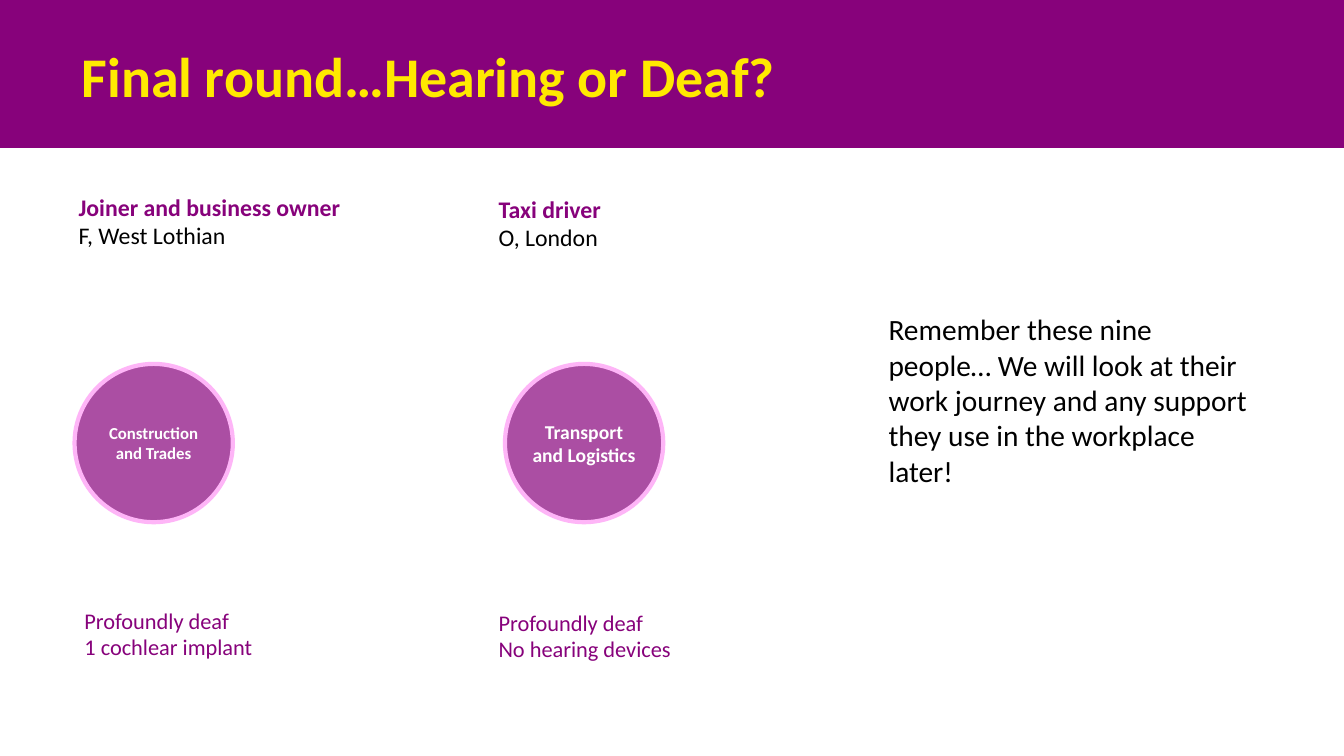
from pptx import Presentation
from pptx.dml.color import RGBColor
from pptx.enum.shapes import MSO_SHAPE
from pptx.enum.text import MSO_ANCHOR, PP_ALIGN
from pptx.util import Cm, Pt

RECT = MSO_SHAPE.RECTANGLE
OVAL = MSO_SHAPE.OVAL
TOP = MSO_ANCHOR.TOP
MIDDLE = MSO_ANCHOR.MIDDLE
LEFT = PP_ALIGN.LEFT
CENTER = PP_ALIGN.CENTER

PURPLE = RGBColor(0x87, 0x02, 0x7B)
ORCHID = RGBColor(0xAB, 0x4E, 0xA3)
PINK = RGBColor(0xFE, 0xB5, 0xF7)
YELLOW = RGBColor(0xFF, 0xE9, 0x00)
BLACK = RGBColor(0x00, 0x00, 0x00)
WHITE = RGBColor(0xFF, 0xFF, 0xFF)

NARROW = (0.25, 0.13)
WIDE = (0.33, 0.18)


class Deck:
    font = "Calibri"

    def __init__(self, width, height):
        self.prs = Presentation()
        self.prs.slide_width = Cm(width)
        self.prs.slide_height = Cm(height)
        self.s = self.prs.slides.add_slide(self.prs.slide_layouts[6])

    def fill_text(self, sp, lines, size, inset, anchor=TOP, align=LEFT):
        tf = sp.text_frame
        tf.word_wrap = True
        tf.vertical_anchor = anchor
        tf.margin_left = tf.margin_right = Cm(inset[0])
        tf.margin_top = tf.margin_bottom = Cm(inset[1])
        for i, (text, color, bold) in enumerate(lines):
            p = tf.paragraphs[0] if i == 0 else tf.add_paragraph()
            p.alignment = align
            r = p.add_run()
            r.text = text
            r.font.name = self.font
            r.font.size = Pt(size)
            r.font.bold = bold
            r.font.color.rgb = color

    def text(self, box, lines, size, inset=NARROW, anchor=TOP):
        sp = self.s.shapes.add_textbox(*map(Cm, box))
        self.fill_text(sp, lines, size, inset, anchor)

    def shape(self, kind, box, fill, line=None):
        sp = self.s.shapes.add_shape(kind, *map(Cm, box))
        sp.shadow.inherit = False
        sp.fill.solid()
        sp.fill.fore_color.rgb = fill
        if line is None:
            sp.line.fill.background()
        else:
            sp.line.color.rgb = line
            sp.line.width = Pt(3)
        return sp

    def circle(self, left, top, label, size):
        sp = self.shape(OVAL, (left, top, 3.99, 3.99), ORCHID, PINK)
        self.fill_text(sp, [(label, WHITE, True)], size, (0, 0), MIDDLE, CENTER)

    def person(self, job, place, job_box, sector, size, circle_left,
               hearing, hearing_box, inset):
        self.text(job_box, [(job, PURPLE, True), (place, BLACK, False)], 17, inset)
        self.circle(circle_left, 9.17, sector, size)
        self.text(hearing_box, [(line, PURPLE, False) for line in hearing], 16, inset)


def main():
    deck = Deck(33.88, 19.05)
    deck.shape(RECT, (0, 0, 33.88, 3.73), PURPLE)
    deck.text((1.73, 0.89, 22.94, 2.01),
              [("Final round…Hearing or Deaf?", YELLOW, True)], 40, WIDE, MIDDLE)
    deck.person("Joiner and business owner", "F, West Lothian",
                (1.73, 4.72, 10.74, 2.44),
                "Construction and Trades", 12, 1.88,
                ["Profoundly deaf", "1 cochlear implant"],
                (1.88, 15.16, 6.88, 1.63), NARROW)
    deck.person("Taxi driver", "O, London",
                (12.24, 4.72, 10.03, 2.01),
                "Transport and Logistics", 14, 12.73,
                ["Profoundly deaf", "No hearing devices"],
                (12.24, 15.16, 7.01, 2.01), WIDE)
    deck.text((22.15, 7.72, 9.78, 4.75),
              [("Remember these nine people… We will look at their work journey "
                "and any support they use in the workplace later!", BLACK, False)], 21)
    deck.prs.save("out.pptx")


if __name__ == "__main__":
    main()
